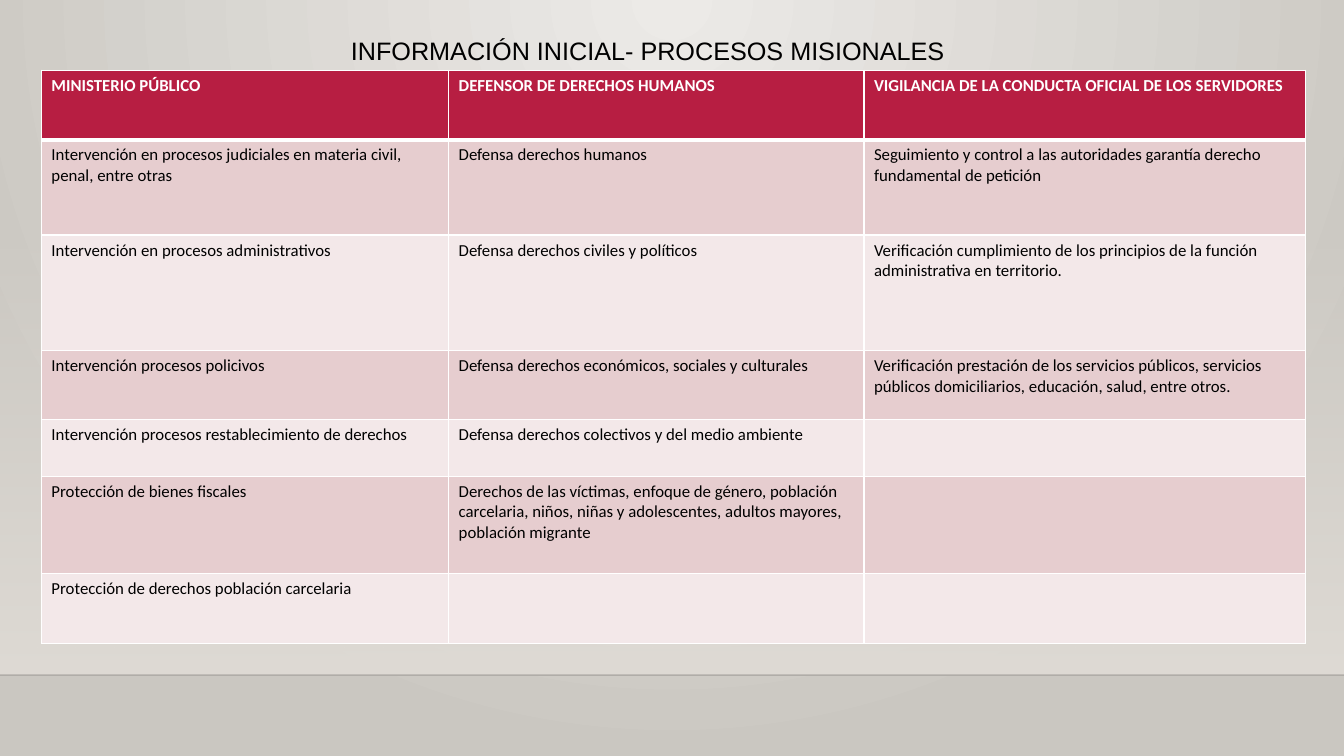
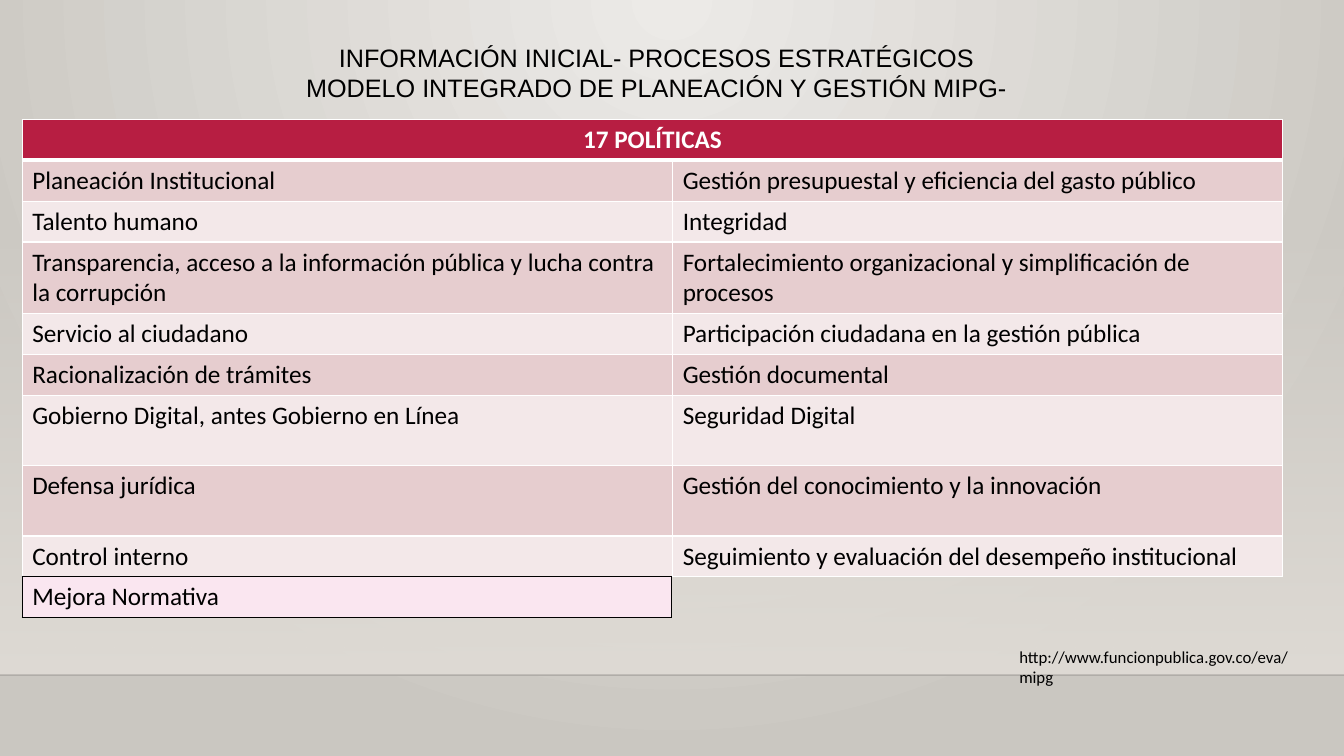
from lxml import etree
from pptx import Presentation
from pptx import util as u
from pptx.dml import color
from pptx.enum import shapes, text
from pptx.oxml import ns

CRIMSON, ROSE, BLUSH, PINK = "B71E42", "E6CDCF", "F3E8E9", "FAE6F0"
BLACK, WHITE = "000000", "FFFFFF"
SAND, PEARL, STONE = "DFDBD5", "ECEAE7", "CAC7C1"
LEFT, CENTER = text.PP_ALIGN.LEFT, text.PP_ALIGN.CENTER
TITLE = (18, "Arial", CENTER)
SOURCE = (12, "Calibri", LEFT)
FLOOR = 0.893


def colour(code):
    return color.RGBColor.from_string(code)


def write(frame, words, size, face, align, code=BLACK, bold=False):
    frame.text = words
    for paragraph in frame.paragraphs:
        paragraph.alignment = align
        for run in paragraph.runs:
            run.font.size, run.font.name, run.font.bold = u.Pt(size), face, bold
            run.font.color.rgb = colour(code)


missions = [
    ("MINISTERIO PÚBLICO", "DEFENSOR DE DERECHOS HUMANOS",
     "VIGILANCIA DE LA CONDUCTA OFICIAL DE LOS SERVIDORES"),
    ("Intervención en procesos judiciales en materia civil, penal, entre otras",
     "Defensa derechos humanos",
     "Seguimiento y control a las autoridades garantía derecho fundamental de petición"),
    ("Intervención en procesos administrativos",
     "Defensa derechos civiles y políticos",
     "Verificación cumplimiento de los principios de la función administrativa en territorio."),
    ("Intervención procesos policivos",
     "Defensa derechos económicos, sociales y culturales",
     "Verificación prestación de los servicios públicos, servicios públicos domiciliarios, "
     "educación, salud, entre otros."),
    ("Intervención procesos restablecimiento de derechos",
     "Defensa derechos colectivos y del medio ambiente", ""),
    ("Protección de bienes fiscales",
     "Derechos de las víctimas, enfoque de género, población carcelaria, niños, niñas y "
     "adolescentes, adultos mayores, población migrante", ""),
    ("Protección de derechos población carcelaria", "", ""),
]
policies = [
    ("17 POLÍTICAS", ""),
    ("Planeación Institucional", "Gestión presupuestal y eficiencia del gasto público"),
    ("Talento humano", "Integridad"),
    ("Transparencia, acceso a la información pública y lucha contra la corrupción",
     "Fortalecimiento organizacional y simplificación de procesos"),
    ("Servicio al ciudadano", "Participación ciudadana en la gestión pública"),
    ("Racionalización de trámites", "Gestión documental"),
    ("Gobierno Digital, antes Gobierno en Línea", "Seguridad Digital"),
    ("Defensa jurídica", "Gestión del conocimiento y la innovación"),
    ("Control interno", "Seguimiento y evaluación del desempeño institucional"),
]
pages = [
    {
        "tables": [(missions, 3.08, 9.3, (30.3, 30.9, 32.85),
                    (9.2, 12.6, 15.3, 9.1, 7.5, 12.9, 9.2), 12, True)],
        "texts": [("INFORMACIÓN INICIAL- PROCESOS MISIONALES", (23.2, 4, 50, 5.3), TITLE)],
    },
    {
        "tables": [(policies, 1.65, 15.8, (48.4, 45.4),
                    (5.4, 5.4, 5.4, 9.3, 5.4, 5.4, 9.3, 9.3, 5.4), 18, True),
                   ([("Mejora Normativa",)], 1.65, 76.25, (48.3,), (5.4,), 18, False)],
        "texts": [("INFORMACIÓN INICIAL- PROCESOS ESTRATÉGICOS\n"
                   "MODELO INTEGRADO DE PLANEACIÓN Y GESTIÓN MIPG-",
                   (3, 4.95, 91.7, 9.5), TITLE),
                  ("http://www.funcionpublica.gov.co/eva/mipg",
                   (75.1, 84.9, 23.9, 8.1), SOURCE)],
    },
]

deck = Presentation()
deck.slide_width, deck.slide_height = u.Inches(13.33), u.Inches(7.5)
WIDE, HIGH = deck.slide_width, deck.slide_height
floor_y = int(HIGH * FLOOR)

backdrop = deck.slide_master.background.fill
backdrop.gradient()
for stop, code in zip(backdrop.gradient_stops, (PEARL, STONE)):
    stop.color.rgb = colour(code)
glow = deck.slide_master._element.xpath(".//p:bg//a:gradFill")[0]
glow.remove(glow.find(ns.qn("a:lin")))
circle = etree.SubElement(glow, ns.qn("a:path"), path="circle")
etree.SubElement(circle, ns.qn("a:fillToRect"), l="43000", t="0", r="43000", b="100000")

for page in pages:
    slide = deck.slides.add_slide(deck.slide_layouts[6])

    wall_y = int(HIGH * 0.295)
    wall = slide.shapes.add_shape(shapes.MSO_SHAPE.RECTANGLE, 0, wall_y, WIDE, floor_y - wall_y)
    wall.shadow.inherit = False
    wall.line.fill.background()
    wall.fill.gradient()
    wall.fill.gradient_angle = 270
    for stop in wall.fill.gradient_stops:
        stop.color.rgb = colour(SAND)
    clear = wall._element.xpath(".//a:gs[1]/a:srgbClr")[0]
    etree.SubElement(clear, ns.qn("a:alpha"), val="0")

    skirting = slide.shapes.add_connector(shapes.MSO_CONNECTOR.STRAIGHT, 0, floor_y, WIDE, floor_y)
    skirting.line.width = u.Pt(1)
    skirting.line.color.rgb = colour(BLACK)
    faint = skirting._element.xpath(".//a:ln//a:srgbClr")[0]
    etree.SubElement(faint, ns.qn("a:alpha"), val="20000")
    etree.SubElement(skirting._element.spPr, ns.qn("a:effectLst"))

    for rows, left, top, widths, heights, size, headed in page["tables"]:
        grid = slide.shapes.add_table(
            len(rows), len(widths), int(WIDE * left / 100), int(HIGH * top / 100),
            int(WIDE * sum(widths) / 100), int(HIGH * sum(heights) / 100)).table
        grid.first_row = headed
        for column, share in zip(grid.columns, widths):
            column.width = int(WIDE * share / 100)
        for r, (row, share) in enumerate(zip(rows, heights)):
            grid.rows[r].height = int(HIGH * share / 100)
            heading = headed and r == 0
            if heading:
                fill = CRIMSON
            elif headed:
                fill = ROSE if r % 2 else BLUSH
            else:
                fill = PINK
            for c, words in enumerate(row):
                cell = grid.cell(r, c)
                for side in "LRTB":
                    thick = headed and (r, side) in ((0, "B"), (1, "T"))
                    edge = etree.SubElement(cell._tc.get_or_add_tcPr(), ns.qn("a:ln" + side),
                                            w=str(u.Pt(3 if thick else 1)))
                    ink = etree.SubElement(edge, ns.qn("a:solidFill"))
                    etree.SubElement(ink, ns.qn("a:srgbClr"), val=WHITE if headed else BLACK)
                cell.fill.solid()
                cell.fill.fore_color.rgb = colour(fill)
                align = CENTER if heading and not all(row) else LEFT
                write(cell.text_frame, words, size, "Calibri", align,
                      WHITE if heading else BLACK, heading)
        if headed and not all(rows[0]):
            grid.cell(0, 0).merge(grid.cell(0, len(widths) - 1))

    for words, area, style in page["texts"]:
        box = [int(side * share / 100) for side, share in zip((WIDE, HIGH) * 2, area)]
        frame = slide.shapes.add_textbox(*box).text_frame
        frame.word_wrap = True
        write(frame, words, *style)

deck.save("out.pptx")
